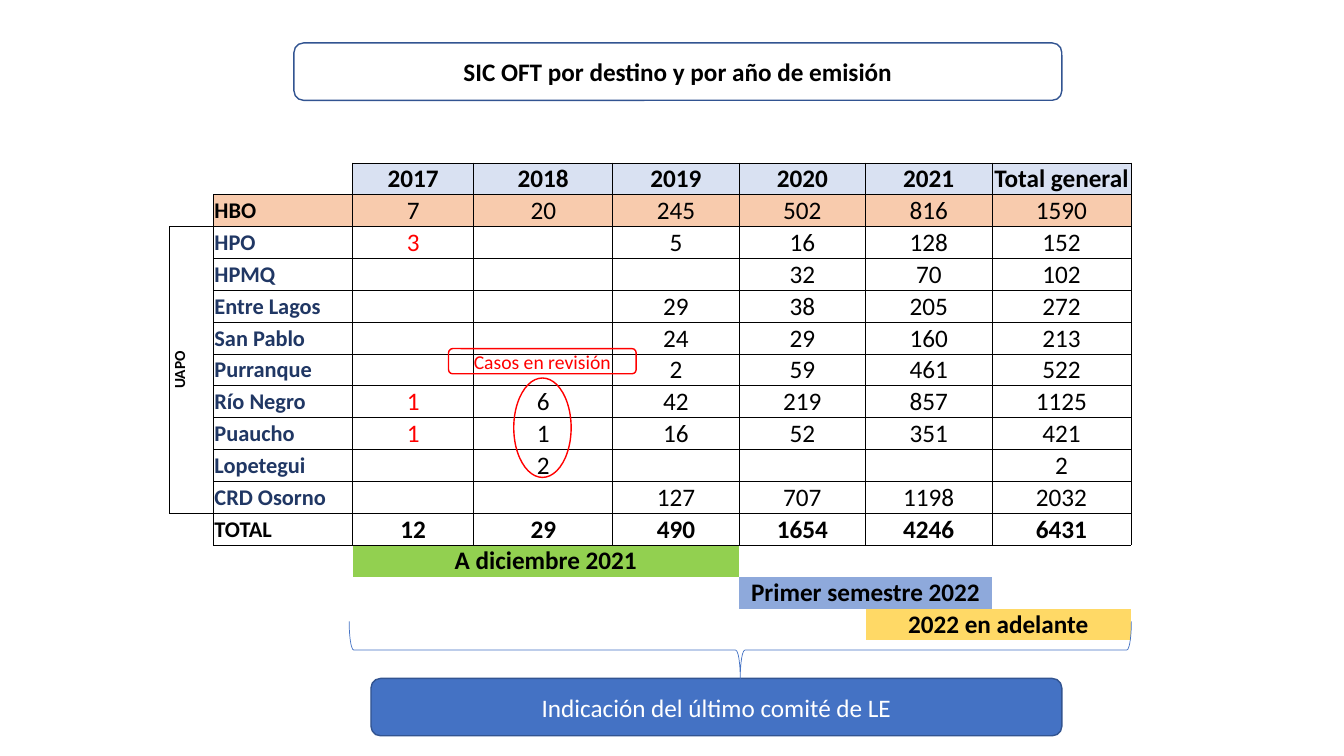
from lxml.etree import SubElement
from pptx import Presentation
from pptx.dml.color import RGBColor
from pptx.enum.shapes import MSO_SHAPE
from pptx.enum.text import MSO_ANCHOR, PP_ALIGN
from pptx.oxml.ns import qn
from pptx.util import Pt

COLORS = {
    "black": "000000", "white": "FFFFFF", "red": "FF0000", "navy": "203764",
    "blue": "4472C4", "outline": "325491", "header": "D9E1F2", "hbo": "F8CBAD",
    "green": "92D050", "periwinkle": "8EA9DB", "gold": "FFD966",
}
FONT = "Calibri"
NO_STYLE = "{2D5ABB26-0587-4C30-8999-92F81FD0307C}"

COL_WIDTHS = [31.5, 99.3, 86.6, 99.3, 90.3, 90.3, 90.3, 99.3]
ROW_COUNT = 17
HEADER_ROW, HBO_ROW, TOTAL_ROW = 2, 3, 13
HEADERS = ["2017", "2018", "2019", "2020", "2021", "Total general"]
DESTINATIONS = [
    ("HBO", ["7", "20", "245", "502", "816", "1590"]),
    ("HPO", ["3", "", "5", "16", "128", "152"]),
    ("HPMQ", ["", "", "", "32", "70", "102"]),
    ("Entre Lagos", ["", "", "29", "38", "205", "272"]),
    ("San Pablo", ["", "", "24", "29", "160", "213"]),
    ("Purranque", ["", "", "2", "59", "461", "522"]),
    ("Río Negro", ["1", "6", "42", "219", "857", "1125"]),
    ("Puaucho", ["1", "1", "16", "52", "351", "421"]),
    ("Lopetegui", ["", "2", "", "", "", "2"]),
    ("CRD Osorno", ["", "", "127", "707", "1198", "2032"]),
    ("TOTAL", ["12", "29", "490", "1654", "4246", "6431"]),
]
DEADLINES = [
    (14, 2, 4, "A diciembre 2021", "green"),
    (15, 5, 6, "Primer semestre 2022", "periwinkle"),
    (16, 6, 7, "2022 en adelante", "gold"),
]


def rgb(name):
    return RGBColor.from_string(COLORS[name])


def write(tf, text, size, color, bold=False, align=PP_ALIGN.CENTER):
    p = tf.paragraphs[0]
    p.text = text
    p.alignment = align
    for r in p.runs:
        r.font.name = FONT
        r.font.size = Pt(size)
        r.font.bold = bold
        r.font.color.rgb = rgb(color)


def add_shape(s, kind, box, line, width=1, fill=None):
    sp = s.shapes.add_shape(kind, *[Pt(v) for v in box])
    sp.shadow.inherit = False
    sp.line.color.rgb = rgb(line)
    sp.line.width = Pt(width)
    if fill:
        sp.fill.solid()
        sp.fill.fore_color.rgb = rgb(fill)
    else:
        sp.fill.background()
    return sp


def add_label(s, box, line, text, size, color, bold=False, fill=None):
    sp = add_shape(s, MSO_SHAPE.ROUNDED_RECTANGLE, box, line, fill=fill)
    sp.text_frame.word_wrap = True
    sp.text_frame.vertical_anchor = MSO_ANCHOR.MIDDLE
    write(sp.text_frame, text, size, color, bold)


def in_grid(row, col):
    if col == 0:
        return HBO_ROW < row < TOTAL_ROW
    if col == 1:
        return HBO_ROW <= row <= TOTAL_ROW
    return col < len(COL_WIDTHS) and HEADER_ROW <= row <= TOTAL_ROW


def set_borders(cell, row, col):
    tcPr = cell._tc.get_or_add_tcPr()
    neighbours = {"lnL": (row, col - 1), "lnR": (row, col + 1),
                  "lnT": (row - 1, col), "lnB": (row + 1, col)}
    for tag, (r, c) in neighbours.items():
        ln = SubElement(tcPr, qn("a:" + tag), w=str(Pt(0.5)))
        if in_grid(row, col) or (c >= 0 and in_grid(r, c)):
            fill = SubElement(ln, qn("a:solidFill"))
            SubElement(fill, qn("a:srgbClr"), val=COLORS["black"])
        else:
            SubElement(ln, qn("a:noFill"))


def fill_cell(cell, color):
    cell.fill.solid()
    cell.fill.fore_color.rgb = rgb(color)


def write_destinations(table):
    for row, (name, values) in enumerate(DESTINATIONS, HBO_ROW):
        is_uapo = HBO_ROW < row < TOTAL_ROW
        write(table.cell(row, 1).text_frame, name, 16,
              "navy" if is_uapo else "black", True, PP_ALIGN.LEFT)
        for col, value in enumerate(values, 2):
            color = "red" if is_uapo and col == 2 else "black"
            write(table.cell(row, col).text_frame, value, 18, color,
                  row == TOTAL_ROW)


def add_destination_table(s):
    frame = s.shapes.add_table(ROW_COUNT, len(COL_WIDTHS), Pt(121), Pt(72),
                               Pt(sum(COL_WIDTHS)), Pt(385.9))
    table = frame.table
    table.first_row = table.horz_banding = False
    table._tbl.tblPr.find(qn("a:tableStyleId")).text = NO_STYLE
    for column, width in zip(table.columns, COL_WIDTHS):
        column.width = Pt(width)
    for row, tr in enumerate(table.rows):
        tr.height = Pt(22.2 if row < HEADER_ROW else 22.76)
        for col, cell in enumerate(tr.cells):
            cell.margin_left = cell.margin_right = cell.margin_top = Pt(0.7)
            cell.margin_bottom = Pt(0)
            if row < HEADER_ROW:
                cell.margin_top = Pt(0)
            cell.vertical_anchor = MSO_ANCHOR.MIDDLE
            set_borders(cell, row, col)
            cell.fill.background()

    table.cell(0, 2).merge(table.cell(0, 7))
    for col, year in enumerate(HEADERS, 2):
        cell = table.cell(HEADER_ROW, col)
        write(cell.text_frame, year, 18, "black", True)
        fill_cell(cell, "header")
    for col in range(1, len(COL_WIDTHS)):
        fill_cell(table.cell(HBO_ROW, col), "hbo")
    write_destinations(table)

    uapo = table.cell(HBO_ROW + 1, 0)
    uapo.merge(table.cell(TOTAL_ROW - 1, 0))
    uapo._tc.get_or_add_tcPr().set("vert", "vert270")
    write(uapo.text_frame, "UAPO", 11, "black", True)

    for row, first, last, text, color in DEADLINES:
        cell = table.cell(row, first)
        cell.merge(table.cell(row, last))
        write(cell.text_frame, text, 18, "black", True)
        fill_cell(cell, color)


def add_brace(s):
    sp = add_shape(s, MSO_SHAPE.LEFT_BRACE, (508.3, 185, 41, 558.7), "blue", 0.5)
    sp.adjustments[0] = 0.08
    sp.adjustments[1] = 0.5
    sp.rotation = 270


def main():
    prs = Presentation()
    prs.slide_width, prs.slide_height = Pt(960), Pt(540)
    s = prs.slides.add_slide(prs.slide_layouts[6])
    add_destination_table(s)
    add_label(s, (265, 484.6, 493.5, 41), "outline",
              "Indicación del último comité de LE", 18, "white", fill="blue")
    add_brace(s)
    add_shape(s, MSO_SHAPE.OVAL, (367, 270, 41, 71), "red")
    add_label(s, (320.4, 249, 134, 18), "red", "Casos en revisión", 14, "red")
    add_label(s, (210, 30.7, 548.5, 41), "outline",
              "SIC OFT por destino y por año de emisión", 18, "black", True)
    prs.save("out.pptx")


if __name__ == "__main__":
    main()
